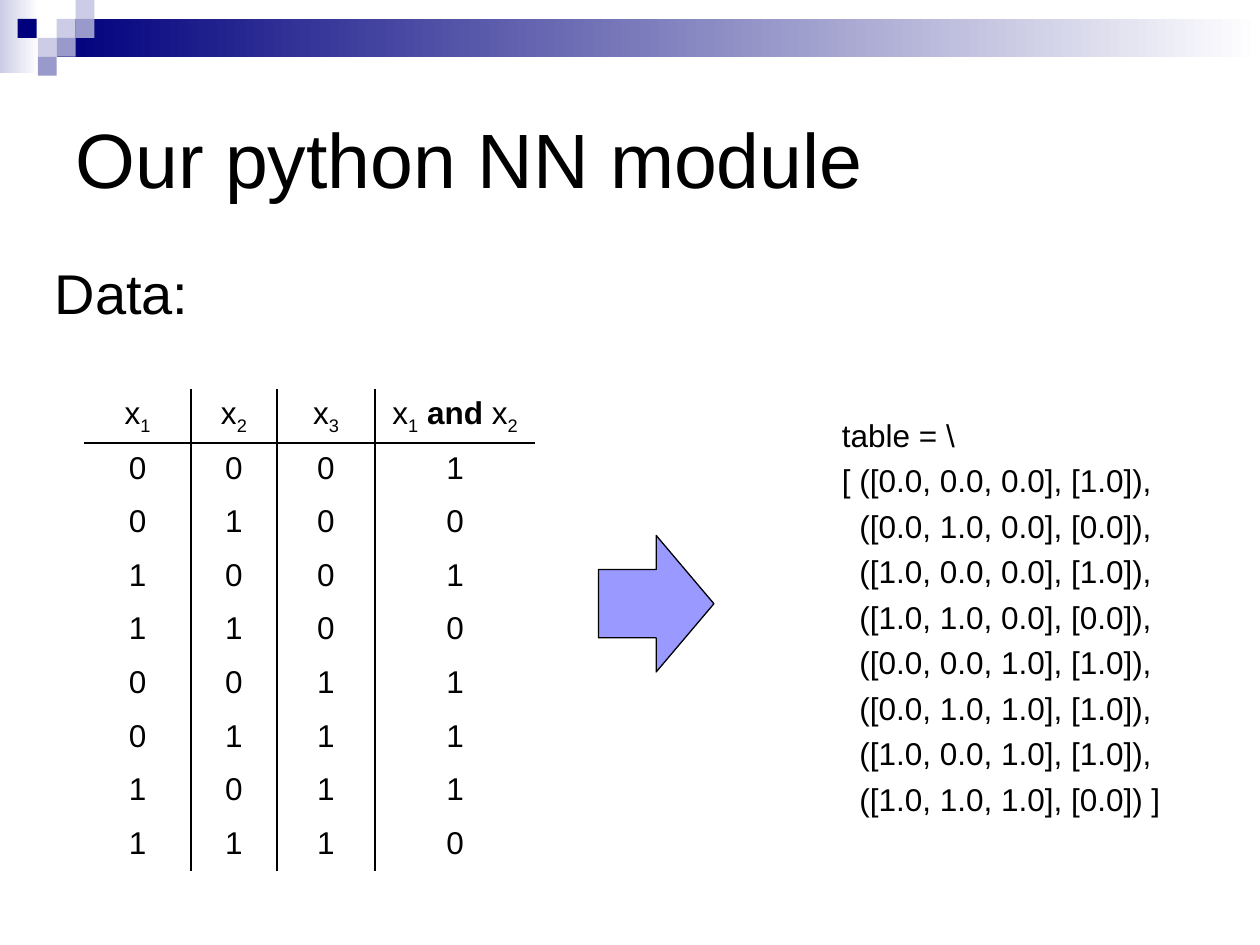
"""Build the slide that turns a truth table into Python training data."""
from dataclasses import dataclass
from typing import Any

import pptx
import pptx.dml.color
import pptx.enum.shapes
import pptx.enum.text
import pptx.oxml
import pptx.oxml.ns
import pptx.util

Pt = pptx.util.Pt
RGBColor = pptx.dml.color.RGBColor
Shape = pptx.enum.shapes.MSO_SHAPE
Align = pptx.enum.text.PP_ALIGN
Anchor = pptx.enum.text.MSO_ANCHOR

BLACK = RGBColor(0x00, 0x00, 0x00)
WHITE = RGBColor(0xFF, 0xFF, 0xFF)
NAVY = RGBColor(0x00, 0x00, 0x7D)
LAVENDER = RGBColor(0xCC, 0xCC, 0xE6)
PERIWINKLE = RGBColor(0x99, 0x99, 0xCC)
ARROW_BLUE = RGBColor(0x99, 0x99, 0xFF)

FONT = "Arial"
TILE = 10.8
SPACING = 4.4
COLUMN_WIDTHS = (61.2, 49, 56.2, 91.4)
ROW_HEIGHT = 30.6
SAMPLES = (
    (0, 0, 0, 1), (0, 1, 0, 0), (1, 0, 0, 1), (1, 1, 0, 0),
    (0, 0, 1, 1), (0, 1, 1, 1), (1, 0, 1, 1), (1, 1, 1, 0),
)


@dataclass(frozen=True)
class Box:
    left: float
    top: float
    width: float
    height: float

    def lengths(self) -> tuple[Any, ...]:
        return tuple(Pt(n) for n in (self.left, self.top, self.width, self.height))


@dataclass(frozen=True)
class Block:
    box: Box
    color: RGBColor
    fades: bool = False


@dataclass(frozen=True)
class Piece:
    text: str
    bold: bool = False
    subscript: bool = False


def variable(index: int) -> list[Piece]:
    return [Piece("x"), Piece(str(index), subscript=True)]


HEADINGS = [variable(1), variable(2), variable(3),
            [*variable(1), Piece(" and ", bold=True), *variable(2)]]

BLOCKS = [
    Block(Box(0, 0, 22.3, 41.8), LAVENDER, True),
    Block(Box(32.4, TILE, 687.6, 2 * TILE), NAVY, True),
    Block(Box(10.1, TILE, TILE, TILE), NAVY),
    *(Block(Box(column * TILE, row * TILE, TILE, TILE), color)
      for column, row, color in (
          (3, 1, LAVENDER), (4, 0, LAVENDER), (4, 1, PERIWINKLE),
          (2, 2, LAVENDER), (3, 2, PERIWINKLE), (2, 3, PERIWINKLE))),
]


def assign(target: Any, values: dict[str, Any]) -> None:
    for name, value in values.items():
        setattr(target, name, value)


def write(paragraph: Any, pieces: list[Piece], size: float) -> None:
    for piece in pieces:
        run = paragraph.add_run()
        run.text = piece.text
        assign(run.font, {"name": FONT, "size": Pt(size), "bold": piece.bold})
        run.font.color.rgb = BLACK
        if piece.subscript:
            run.font._element.set("baseline", "-25000")


def draw_block(slide: Any, block: Block) -> None:
    shape = slide.shapes.add_shape(Shape.RECTANGLE, *block.box.lengths())
    shape.shadow.inherit = False
    shape.line.fill.background()
    if block.fades:
        shape.fill.gradient()
        shape.fill.gradient_angle = 0
        for stop, color, position in zip(
                shape.fill.gradient_stops, (block.color, WHITE), (0, 1)):
            stop.color.rgb = color
            stop.position = position
    else:
        shape.fill.solid()
        shape.fill.fore_color.rgb = block.color


def fill_placeholder(holder: Any, box: Box, text: str, size: float, anchor: Any) -> Any:
    assign(holder, dict(zip(("left", "top", "width", "height"), box.lengths())))
    assign(holder.text_frame, {"vertical_anchor": anchor, "word_wrap": True})
    paragraph = holder.text_frame.paragraphs[0]
    paragraph.alignment = Align.LEFT
    write(paragraph, [Piece(text)], size)
    return paragraph


def set_borders(cell: Any, visible: dict[str, bool]) -> None:
    properties = cell._tc.get_or_add_tcPr()
    for index, (side, shown) in enumerate(visible.items()):
        paint = (f'<a:solidFill><a:srgbClr val="{BLACK}"/></a:solidFill>'
                 if shown else "<a:noFill/>")
        properties.insert(index, pptx.oxml.parse_xml(
            f'<a:ln{side} {pptx.oxml.ns.nsdecls("a")} w="12700">{paint}</a:ln{side}>'))


def draw_truth_table(slide: Any) -> None:
    rows = [HEADINGS, *([[Piece(str(n))] for n in sample] for sample in SAMPLES)]
    box = Box(48, 222, sum(COLUMN_WIDTHS), ROW_HEIGHT * len(rows))
    table = slide.shapes.add_table(len(rows), len(COLUMN_WIDTHS), *box.lengths()).table
    assign(table, {"first_row": False, "horz_banding": False})
    for column, width in zip(table.columns, COLUMN_WIDTHS):
        column.width = Pt(width)
    last = len(COLUMN_WIDTHS) - 1
    for r, row in enumerate(rows):
        table.rows[r].height = Pt(ROW_HEIGHT)
        for c, pieces in enumerate(row):
            cell = table.cell(r, c)
            cell.fill.background()
            assign(cell, {"margin_top": Pt(4.5), "vertical_anchor": Anchor.TOP})
            set_borders(cell, {"L": c > 0, "R": c < last, "T": r == 1, "B": r == 0})
            paragraph = cell.text_frame.paragraphs[0]
            paragraph.alignment = Align.CENTER
            write(paragraph, pieces, 18)


def code_lines() -> list[str]:
    lines = ["table = \\"]
    for index, (*inputs, output) in enumerate(SAMPLES):
        opening = "[ " if index == 0 else "  "
        closing = " ]" if index == len(SAMPLES) - 1 else ","
        values = ", ".join(f"{n:.1f}" for n in inputs)
        lines.append(f"{opening}([{values}], [{output:.1f}]){closing}")
    return lines


def draw_code(slide: Any) -> None:
    frame = slide.shapes.add_textbox(*Box(474, 234, 204, 258).lengths()).text_frame
    frame.word_wrap = True
    for index, line in enumerate(code_lines()):
        paragraph = frame.add_paragraph() if index else frame.paragraphs[0]
        paragraph.space_before = Pt(SPACING)
        write(paragraph, [Piece(line)], 18)


def draw_arrow(slide: Any) -> None:
    arrow = slide.shapes.add_shape(Shape.RIGHT_ARROW, *Box(342, 306, 66, 78).lengths())
    arrow.shadow.inherit = False
    arrow.fill.solid()
    arrow.fill.fore_color.rgb = ARROW_BLUE
    arrow.line.color.rgb = BLACK
    arrow.line.width = Pt(0.75)


def main() -> None:
    deck = pptx.Presentation()
    assign(deck, {"slide_width": Pt(720), "slide_height": Pt(540)})
    slide = deck.slides.add_slide(deck.slide_layouts[1])
    for block in BLOCKS:
        draw_block(slide, block)
    title, body = slide.placeholders
    fill_placeholder(title, Box(36, 36, 648, 108), "Our python NN module", 44, Anchor.MIDDLE)
    heading = fill_placeholder(body, Box(24, 144, 384, 60), "Data:", 32, Anchor.TOP)
    properties = heading._p.get_or_add_pPr()
    assign(heading, {"space_before": Pt(7.4)})
    for name in ("marL", "indent"):
        properties.set(name, "0")
    properties.append(pptx.oxml.parse_xml(f'<a:buNone {pptx.oxml.ns.nsdecls("a")}/>'))
    draw_truth_table(slide)
    draw_code(slide)
    draw_arrow(slide)
    deck.save("out.pptx")


if __name__ == "__main__":
    main()
